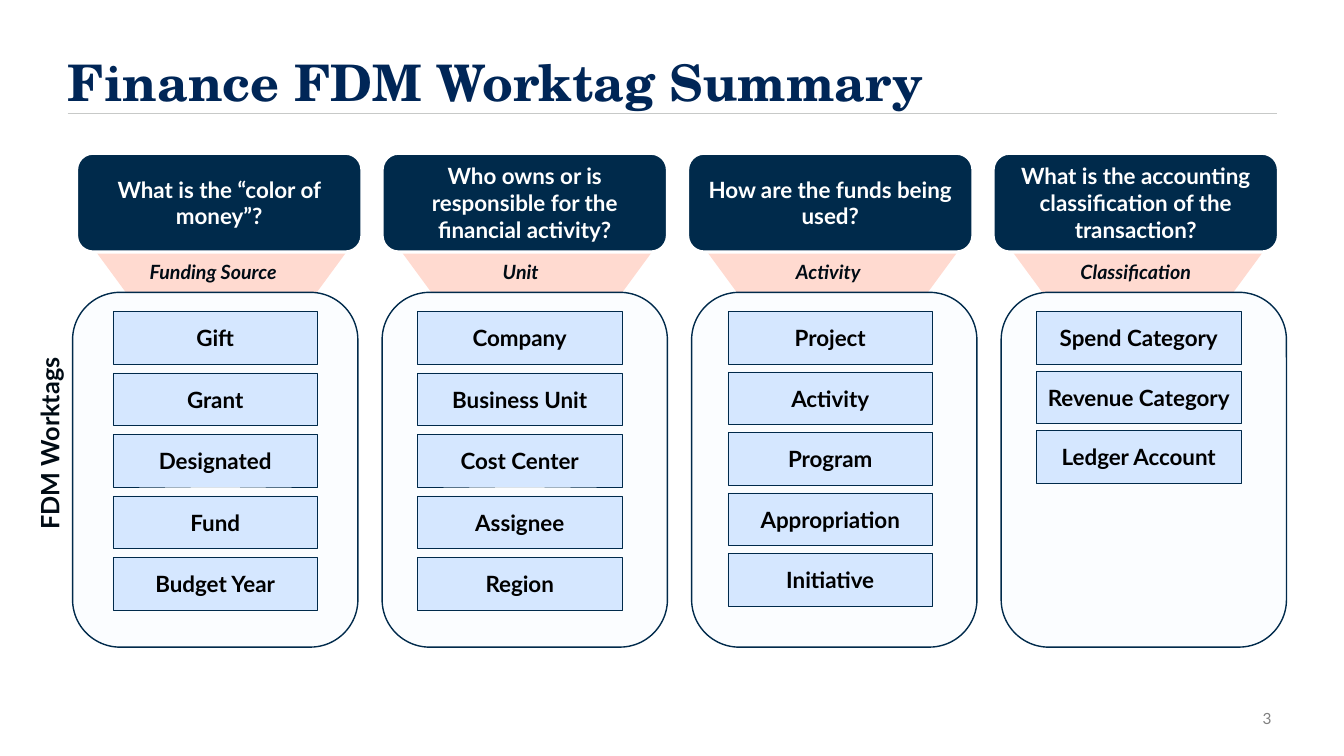
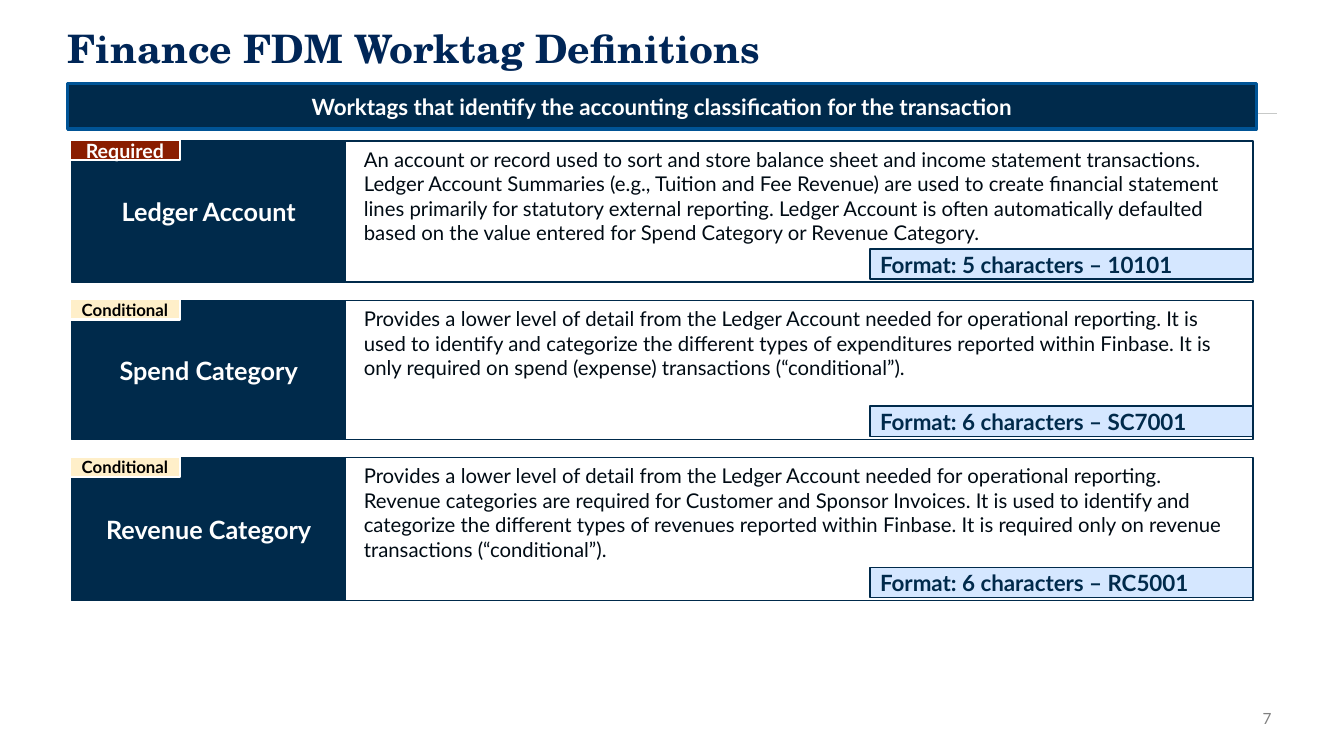
"""Build two slides that summarise and define the finance FDM worktags."""
import pptx
import pptx.dml.color
import pptx.enum.shapes
import pptx.enum.text
import pptx.oxml
import pptx.oxml.ns
import pptx.util

COLOURS = {
    "navy": "002A4B", "title": "002657", "blue": "005496", "sky": "D5E7FF",
    "mist": "FBFDFF", "peach": "FFDAD0", "brick": "8A1D00", "cream": "FFEFC9",
    "ink": "000B14", "black": "000000", "white": "FFFFFF",
    "rule": "C7C9C8", "number": "808080",
}
BODY_FONT, TITLE_FONT = "Lato", "TeX Gyre Schola"
WIDTH, HEIGHT = 13.33, 7.5
MARGIN, CONTENT_WIDTH = 0.67, 12
SHAPES = pptx.enum.shapes.MSO_SHAPE
ALIGN = pptx.enum.text.PP_ALIGN
ANCHOR = pptx.enum.text.MSO_ANCHOR

WORKTAGS = [
    ("What is the “color of money”?", "Funding Source", 1.12, 0.61,
     ["Gift", "Grant", "Designated", "Fund", "Budget Year"]),
    ("Who owns or is responsible for the financial activity?", "Unit", 4.14, 0.61,
     ["Company", "Business Unit", "Cost Center", "Assignee", "Region"]),
    ("How are the funds being used?", "Activity", 7.22, 0.6,
     ["Project", "Activity", "Program", "Appropriation", "Initiative"]),
    ("What is the accounting classification of the transaction?", "Classification",
     10.28, 0.59, ["Spend Category", "Revenue Category", "Ledger Account"]),
]

REQUIRED = dict(label="Required", fill="brick", colour="white", size=14)
CONDITIONAL = dict(label="Conditional", fill="cream", colour="black", size=12)
DEFINITIONS = [
    (1.4, 1.4, 8.89, REQUIRED, "Ledger Account", "Format: 5 characters – 10101",
     "An account or record used to sort and store balance sheet and income statement "
     "transactions. Ledger Account Summaries (e.g., Tuition and Fee Revenue) are used to "
     "create financial statement lines primarily for statutory external reporting. Ledger "
     "Account is often automatically defaulted based on the value entered for Spend "
     "Category or Revenue Category."),
    (2.98, 1.38, 8.76, CONDITIONAL, "Spend Category", "Format: 6 characters – SC7001",
     "Provides a lower level of detail from the Ledger Account needed for operational "
     "reporting. It is used to identify and categorize the different types of expenditures "
     "reported within Finbase. It is only required on spend (expense) transactions "
     "(“conditional”)."),
    (4.54, 1.42, 8.84, CONDITIONAL, "Revenue Category", "Format: 6 characters – RC5001",
     "Provides a lower level of detail from the Ledger Account needed for operational "
     "reporting. Revenue categories are required for Customer and Sponsor Invoices. It is "
     "used to identify and categorize the different types of revenues reported within "
     "Finbase. It is required only on revenue transactions (“conditional”)."),
]


def rgb(colour):
    """Return the named colour."""
    return pptx.dml.color.RGBColor.from_string(COLOURS[colour])


def inches(*lengths):
    """Return lengths in inches as a list of EMU lengths."""
    return [pptx.util.Inches(length) for length in lengths]


def write(holder, text, size=16, colour="black", bold=True, italic=False,
          font=BODY_FONT, align=ALIGN.CENTER, anchor=ANCHOR.MIDDLE):
    """Put one formatted paragraph in a shape and return the paragraph."""
    frame = holder.text_frame
    frame.word_wrap = True
    frame.vertical_anchor = anchor
    paragraph = frame.paragraphs[0]
    paragraph.alignment = align
    run = paragraph.add_run()
    run.text = text
    run.font.name, run.font.size = font, pptx.util.Pt(size)
    run.font.bold, run.font.italic = bold, italic
    run.font.color.rgb = rgb(colour)
    return paragraph


def add_label(slide, box, text, **text_format):
    """Add a text box without fill or outline."""
    label = slide.shapes.add_textbox(*inches(*box))
    write(label, text, **text_format)
    return label


def add_block(slide, box, fill, line=None, line_width=1, kind=SHAPES.RECTANGLE,
              text=None, **text_format):
    """Add a filled preset shape, with text if any is given."""
    block = slide.shapes.add_shape(kind, *inches(*box))
    block.shadow.inherit = False
    block.fill.solid()
    block.fill.fore_color.rgb = rgb(fill)
    if line:
        block.line.color.rgb = rgb(line)
        block.line.width = pptx.util.Pt(line_width)
    else:
        block.line.fill.background()
    if text:
        write(block, text, **text_format)
    return block


def add_rule(slide, left, top, width):
    """Add the thin horizontal rule below the title."""
    rule = slide.shapes.add_connector(pptx.enum.shapes.MSO_CONNECTOR.STRAIGHT,
                                      *inches(left, top, left + width, top))
    rule.line.color.rgb = rgb("rule")
    rule.line.width = pptx.util.Pt(1)
    rule._element.spPr.append(pptx.oxml.parse_xml(
        "<a:effectLst %s/>" % pptx.oxml.ns.nsdecls("a")))


def start_slide(deck, title, title_top, title_size, number):
    """Add a slide with its title, rule and page number."""
    slide = deck.slides.add_slide(deck.slide_layouts.get_by_name("Title Only"))
    heading = slide.shapes.title
    heading.left, heading.top, heading.width, heading.height = inches(
        MARGIN, title_top, CONTENT_WIDTH, 0.49)
    paragraph = write(heading, title, size=title_size, colour="title",
                      font=TITLE_FONT, align=ALIGN.LEFT)
    paragraph.line_spacing = 0.9
    heading.text_frame.auto_size = pptx.enum.text.MSO_AUTO_SIZE.NONE
    heading.text_frame.margin_left = 0
    add_rule(slide, MARGIN, 0.15 * HEIGHT, CONTENT_WIDTH)
    add_label(slide, (11.9, 6.99, 0.81, 0.29), str(number), size=11, colour="number",
              bold=False, align=ALIGN.RIGHT, anchor=ANCHOR.TOP)
    return slide


def add_worktag_column(slide, column, question, category, tag_left, tag_pitch, tags):
    """Add a question, its category and the worktags that answer it."""
    funnel = add_block(slide, (0.91 + 3.03 * column, 2.44, 2.57, 1.75), "peach",
                       kind=SHAPES.ISOSCELES_TRIANGLE)
    funnel.rotation = 180
    add_block(slide, (0.72 + 3.07 * column, 2.9, 2.83, 3.52), "mist", "navy",
              kind=SHAPES.ROUNDED_RECTANGLE)
    for row, tag in enumerate(tags):
        add_block(slide, (tag_left, 3.09 + tag_pitch * row, 2.03, 0.52), "sky", "navy",
                  0.25, text=tag)
    add_label(slide, (1.23 + 3.05 * column, 2.52, 1.77, 0.35), category, size=14,
              colour="ink", italic=True)
    add_block(slide, (0.76 + 3.03 * column, 1.52, 2.83, 0.98), "navy", "white", 2.25,
              kind=SHAPES.ROUNDED_RECTANGLE, text=question, colour="white")


def add_definition(slide, top, height, text_width, status, worktag, code_format, meaning):
    """Add a worktag tile with its definition, format and status badge."""
    tile_left, tile_width, panel_width, format_width = 0.71, 2.72, 9, 3.8
    panel_left = tile_left + tile_width
    format_left = panel_left + panel_width - format_width
    add_block(slide, (panel_left, top, panel_width, height), "white", "navy")
    add_block(slide, (tile_left, top, tile_width, height), "navy", "navy",
              text=worktag, size=18, colour="white")
    add_label(slide, (panel_left + 0.08, top + 0.01, text_width, height - 0.33), meaning,
              size=14.5, colour="ink", bold=False, align=ALIGN.LEFT, anchor=ANCHOR.TOP)
    add_block(slide, (format_left, top + height - 0.33, format_width, 0.3), "sky", "navy",
              text=code_format, colour="navy", align=ALIGN.LEFT)
    add_block(slide, (tile_left - 0.02, top - 0.01, 1.1, 0.2), status["fill"], "white",
              1.5, text=status["label"], size=status["size"], colour=status["colour"])


def main():
    """Build and save the deck."""
    deck = pptx.Presentation()
    deck.slide_width, deck.slide_height = inches(WIDTH, HEIGHT)

    summary = start_slide(deck, "Finance FDM Worktag Summary", 0.6, 36, 3)
    for column, worktags in enumerate(WORKTAGS):
        add_worktag_column(summary, column, *worktags)
    side_heading = add_label(summary, (-0.6, 4.2, 2.18, 0.4), "FDM Worktags", size=18,
                             colour="ink", anchor=ANCHOR.TOP)
    side_heading.rotation = 270

    definitions = start_slide(deck, "Finance FDM Worktag Definitions", 0.26, 28, 7)
    for definition in DEFINITIONS:
        add_definition(definitions, *definition)
    add_block(definitions, (MARGIN, 0.83, 11.79, 0.45), "navy", "blue", 2.25,
              text="Worktags that identify the accounting classification for the transaction",
              colour="white")

    deck.save("out.pptx")


if __name__ == "__main__":
    main()
